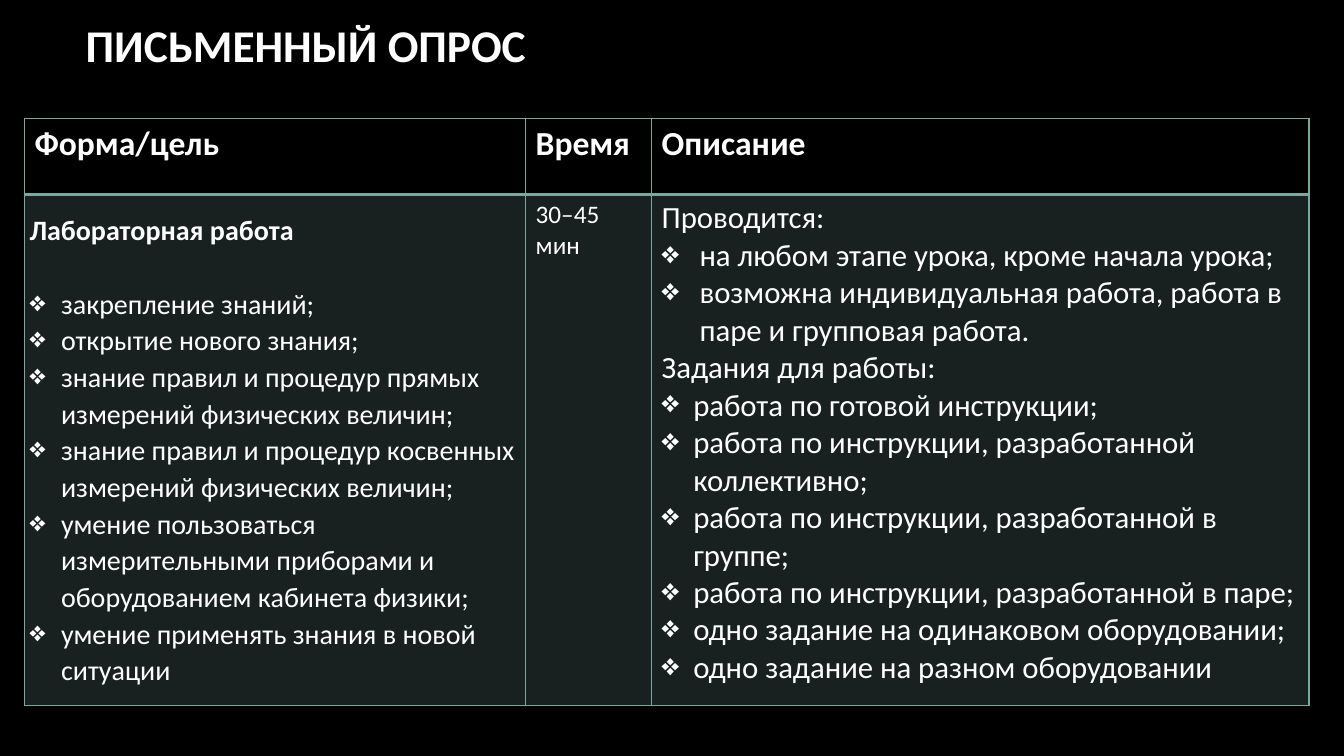
import pptx
import pptx.dml.color
import pptx.enum.text
import pptx.oxml
import pptx.oxml.ns
import pptx.util

Pt = pptx.util.Pt
ANCHOR = pptx.enum.text.MSO_ANCHOR
FONT, WHITE, BLACK, GREEN = "Calibri", "FFFFFF", "000000", "7BA79D"

TITLE = "ПИСЬМЕННЫЙ ОПРОС"
HEADERS = ["Форма/цель", "Время", "Описание"]
# Each paragraph: text, hanging indent in points (0 means no bullet)
FORM = [("Лабораторная работа", 0)] + [(text, 22.5) for text in (
    "закрепление знаний;",
    "открытие нового знания;",
    "знание правил и процедур прямых измерений физических величин;",
    "знание правил и процедур косвенных измерений физических величин;",
    "умение пользоваться измерительными приборами и оборудованием кабинета физики;",
    "умение применять знания в новой ситуации",
)]
TIME = [("30–45 мин", 0)]
DESCRIPTION = [
    ("Проводится:", 0),
    ("на любом этапе урока, кроме начала урока;", 27),
    ("возможна индивидуальная работа, работа в паре и групповая работа.", 27),
    ("Задания для работы:", 0),
] + [(text, 22.5) for text in (
    "работа по готовой инструкции;",
    "работа по инструкции, разработанной коллективно;",
    "работа по инструкции, разработанной в группе;",
    "работа по инструкции, разработанной в паре;",
    "одно задание на одинаковом оборудовании;",
    "одно задание на разном оборудовании",
)]
BODY = [(FORM, 20), (TIME, 18), (DESCRIPTION, 22)]

SLIDE_W, SLIDE_H = 960, 540
TITLE_BOX = dict(left=54, top=9.4, width=797.8, height=43.9)
TABLE_LEFT, TABLE_TOP = 17.5, 84.5
COL_WIDTHS = [358, 90, 469.5]
ROW_HEIGHTS = [54.5, 365]
HEADER_RULE, THIN_RULE = 2, 1
INSET = 3.6


def rgb(value):
    return pptx.dml.color.RGBColor.from_string(value)


def apply(target, values):
    for name, value in values.items():
        setattr(target, name, value)


def add_run(p, text, size, bold=False):
    r = p.add_run()
    r.text = text
    apply(r.font, dict(name=FONT, size=Pt(size), bold=bold))
    r.font.color.rgb = rgb(WHITE)


def add_xml(parent, xml):
    ns = pptx.oxml.ns.nsdecls("a")
    parent.append(pptx.oxml.parse_xml(xml.replace("NS", ns, 1)))


def set_bullet(p, indent):
    pPr = p._p.get_or_add_pPr()
    pPr.set("marL", str(Pt(indent)))
    pPr.set("indent", str(-Pt(indent)))
    add_xml(pPr, '<a:buChar NS char="❖"/>')


def set_borders(cell, top, bottom):
    widths = dict(L=THIN_RULE, R=THIN_RULE, T=top, B=bottom)
    for side, width in widths.items():
        add_xml(cell._tc.get_or_add_tcPr(),
                f'<a:ln{side} NS w="{Pt(width)}"><a:solidFill>'
                f'<a:srgbClr val="{GREEN}"/></a:solidFill></a:ln{side}>')


def fill_cell(cell, paragraphs, size):
    tf = cell.text_frame
    for i, (text, indent) in enumerate(paragraphs):
        p = tf.add_paragraph() if i else tf.paragraphs[0]
        add_run(p, text, size)
        if indent:
            set_bullet(p, indent)


prs = pptx.Presentation()
apply(prs, dict(slide_width=Pt(SLIDE_W), slide_height=Pt(SLIDE_H)))
s = prs.slides.add_slide(prs.slide_layouts[5])
s.background.fill.solid()
s.background.fill.fore_color.rgb = rgb(BLACK)

title = s.shapes.title
apply(title, {name: Pt(value) for name, value in TITLE_BOX.items()})
tf = title.text_frame
apply(tf, dict(vertical_anchor=ANCHOR.MIDDLE, word_wrap=True,
               auto_size=pptx.enum.text.MSO_AUTO_SIZE.NONE))
tf.paragraphs[0].alignment = pptx.enum.text.PP_ALIGN.LEFT
add_run(tf.paragraphs[0], TITLE, 32.4, True)

table = s.shapes.add_table(
    len(ROW_HEIGHTS), len(COL_WIDTHS), Pt(TABLE_LEFT), Pt(TABLE_TOP),
    Pt(sum(COL_WIDTHS)), Pt(sum(ROW_HEIGHTS))).table
apply(table, dict(first_row=False, horz_banding=False))
for column, width in zip(table.columns, COL_WIDTHS):
    column.width = Pt(width)
for row, height in zip(table.rows, ROW_HEIGHTS):
    row.height = Pt(height)

for col, (header, (paragraphs, size)) in enumerate(zip(HEADERS, BODY)):
    head = table.cell(0, col)
    add_run(head.text_frame.paragraphs[0], header, 24, True)
    set_borders(head, THIN_RULE, HEADER_RULE)
    head.fill.background()

    cell = table.cell(1, col)
    fill_cell(cell, paragraphs, size)
    set_borders(cell, HEADER_RULE, THIN_RULE)
    cell.fill.solid()
    cell.fill.fore_color.rgb = rgb(GREEN)
    tint = cell._tc.tcPr.find(pptx.oxml.ns.qn("a:solidFill"))
    add_xml(tint[0], '<a:alpha NS val="20000"/>')

form = table.cell(1, 0)
apply(form, dict(vertical_anchor=ANCHOR.MIDDLE,
                 margin_left=Pt(INSET), margin_right=Pt(INSET),
                 margin_top=Pt(INSET), margin_bottom=Pt(INSET)))
for p in form.text_frame.paragraphs:
    p.line_spacing = 1.07
heading = form.text_frame.paragraphs[0]
heading.space_after = Pt(26)
heading.runs[0].font.bold = True

prs.save("out.pptx")
